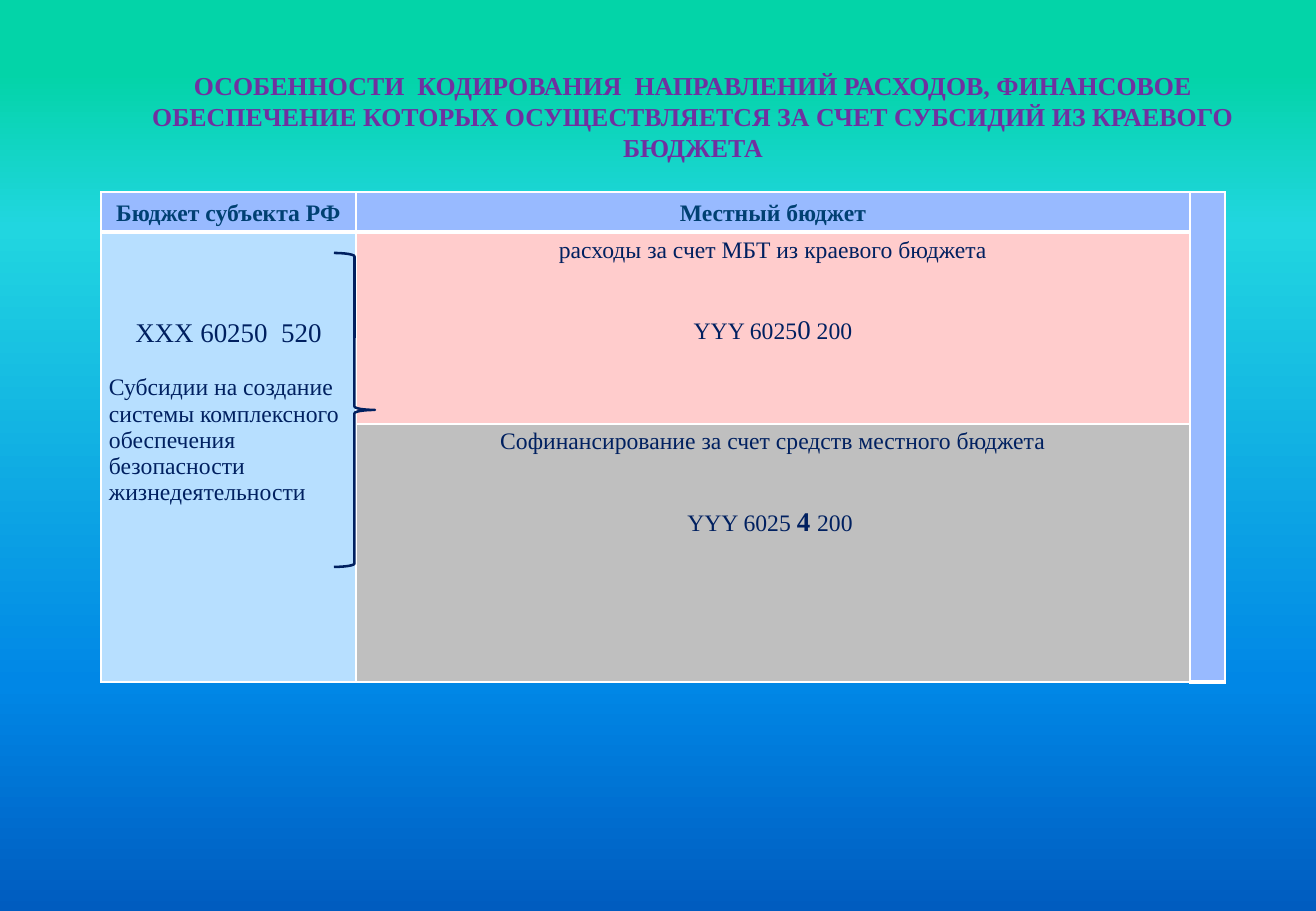
import lxml.etree
import pptx
import pptx.dml.color
import pptx.enum.shapes
import pptx.enum.text
import pptx.oxml.ns
import pptx.util

PX = 914400 / 121.5
FONT = "Times New Roman"
NAVY, WHITE, BLUE = "002060", "FFFFFF", "98BAFF"
STOPS = [(8, "03D4A8"), (25, "21D6E0"), (75, "0087E6"), (100, "005CBF")]

TITLE = ("ОСОБЕННОСТИ  КОДИРОВАНИЯ  НАПРАВЛЕНИЙ РАСХОДОВ, ФИНАНСОВОЕ "
         "ОБЕСПЕЧЕНИЕ КОТОРЫХ ОСУЩЕСТВЛЯЕТСЯ ЗА СЧЕТ СУБСИДИЙ "
         "ИЗ КРАЕВОГО БЮДЖЕТА")
TITLE_BOX = (101, 70, 1184, 81)
BRACE_BOX = (334, 253, 41, 314)

LEFT, TOP = 101, 192
COLS = [255, 834, 35]
ROWS = [39, 192, 258]
MERGES = [((0, 2), (2, 2)), ((1, 0), (2, 0))]

HEAD = {"color": "004072", "bold": True, "line": 1.15}
CODE = {"before": 31}
# (row, column): fill, top margin, paragraphs of (text or runs, format)
CELLS = {
    (0, 0): (BLUE, 5, [("Бюджет субъекта РФ", HEAD)]),
    (0, 1): (BLUE, 5, [("Местный бюджет", HEAD)]),
    (0, 2): (BLUE, 0, []),
    (1, 0): ("B7DFFF", 86, [
        ("ХХХ 60250  520", {"size": 16}),
        ("Субсидии на создание системы комплексного обеспечения "
         "безопасности жизнедеятельности", {"align": "LEFT", "before": 16})]),
    (1, 1): ("FFCCCC", 5, [
        ("расходы за счет МБТ из краевого бюджета", {}),
        ([("YYY 6025", {}), ("0", {"size": 16}), (" 200", {})], CODE)]),
    (2, 1): ("BFBFBF", 5, [
        ("Софинансирование за счет средств местного бюджета", {}),
        ([("YYY 6025 ", {}), ("4 ", {"size": 16, "bold": True}),
          ("200 ", {})], CODE)]),
}


def px(value):
    return round(value * PX)


def rgb(code):
    return pptx.dml.color.RGBColor.from_string(code)


def write(para, text, size=14, color=NAVY, bold=False, align="CENTER",
          before=0, after=0, line=None):
    para.alignment = getattr(pptx.enum.text.PP_ALIGN, align)
    para.space_before = pptx.util.Pt(before)
    para.space_after = pptx.util.Pt(after)
    para.line_spacing = line
    runs = [(text, {})] if isinstance(text, str) else text
    for part, own in runs:
        run = para.add_run()
        run.text = part
        run.font.name = FONT
        run.font.size = pptx.util.Pt(own.get("size", size))
        run.font.bold = own.get("bold", bold)
        run.font.color.rgb = rgb(color)


def node(root, tag, **attrs):
    return lxml.etree.SubElement(root, pptx.oxml.ns.qn(tag), attrs)


def edge(cell, low):
    props = cell._tc.get_or_add_tcPr()
    for spot, side in enumerate("LRTB"):
        width = pptx.util.Pt(low if side == "B" else 1)
        line = node(props, "a:ln" + side, w=str(width))
        node(node(line, "a:solidFill"), "a:srgbClr", val=WHITE)
        props.insert(spot, line)


def paint(slide):
    fill = slide.background.fill
    fill.gradient()
    fill.gradient_angle = 270
    stops = next(slide.element.iter(pptx.oxml.ns.qn("a:gsLst")))
    for old in list(stops):
        stops.remove(old)
    for place, code in STOPS:
        stop = node(stops, "a:gs", pos=str(place * 1000))
        node(stop, "a:srgbClr", val=code)


def head(slide):
    title = slide.shapes.title
    title.left, title.top, title.width, title.height = map(px, TITLE_BOX)
    frame = title.text_frame
    frame.margin_left = frame.margin_right = 0
    frame.margin_top = frame.margin_bottom = 0
    frame.word_wrap = True
    frame.auto_size = pptx.enum.text.MSO_AUTO_SIZE.NONE
    frame.vertical_anchor = pptx.enum.text.MSO_ANCHOR.TOP
    write(frame.paragraphs[0], TITLE, size=15.3, color="7030A0",
          bold=True, after=3)


def grid(slide):
    box = map(px, (LEFT, TOP, sum(COLS), sum(ROWS)))
    table = slide.shapes.add_table(len(ROWS), len(COLS), *box).table
    table.horz_banding = False
    for col, width in zip(table.columns, COLS):
        col.width = px(width)
    for row, height in zip(table.rows, ROWS):
        row.height = px(height)
    for first, last in MERGES:
        table.cell(*first).merge(table.cell(*last))
    for (row, col), (fill, top, paras) in CELLS.items():
        cell = table.cell(row, col)
        cell.fill.solid()
        cell.fill.fore_color.rgb = rgb(fill)
        cell.margin_left = cell.margin_right = px(8)
        cell.margin_top = px(top)
        cell.margin_bottom = px(min(top, 5))
        edge(cell, 3 if row == 0 else 1)
        frame = cell.text_frame
        for spot, (text, style) in enumerate(paras):
            para = frame.add_paragraph() if spot else frame.paragraphs[0]
            write(para, text, **style)


def brace(slide):
    kind = pptx.enum.shapes.MSO_SHAPE.RIGHT_BRACE
    shape = slide.shapes.add_shape(kind, *map(px, BRACE_BOX))
    shape.shadow.inherit = False
    shape.fill.background()
    shape.line.color.rgb = rgb(NAVY)
    shape.line.width = pptx.util.Pt(1.5)


def main():
    """Build the slide on coding of subsidy spending."""
    deck = pptx.Presentation()
    deck.slide_width, deck.slide_height = px(1316), px(911)
    slide = deck.slides.add_slide(deck.slide_layouts[5])
    paint(slide)
    head(slide)
    grid(slide)
    brace(slide)
    deck.save("out.pptx")


if __name__ == "__main__":
    main()
